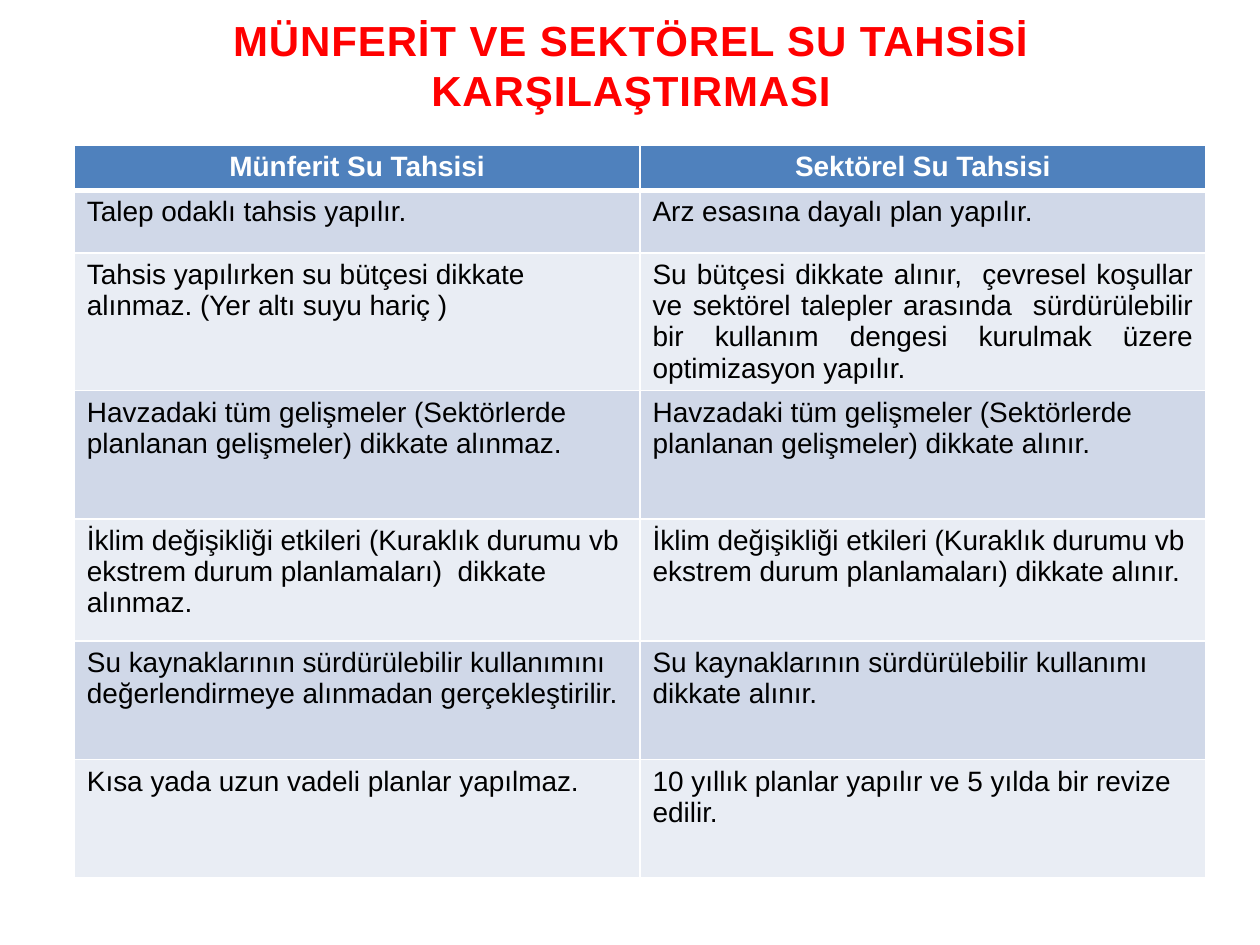
"""Builds a slide comparing individual and sectoral water allocation."""
from lxml import etree
from pptx import Presentation
from pptx.dml.color import RGBColor
from pptx.enum.text import MSO_ANCHOR, PP_ALIGN
from pptx.oxml.ns import qn
from pptx.util import Inches, Pt

LEFT, CENTER, JUSTIFY = PP_ALIGN.LEFT, PP_ALIGN.CENTER, PP_ALIGN.JUSTIFY
MIDDLE = MSO_ANCHOR.MIDDLE
RED = RGBColor(0xFF, 0x00, 0x00)
BLACK = RGBColor(0x00, 0x00, 0x00)
WHITE = RGBColor(0xFF, 0xFF, 0xFF)
HEADER_BLUE = RGBColor(0x4F, 0x81, 0xBD)
BANDS = [RGBColor(0xE9, 0xED, 0xF4), RGBColor(0xD0, 0xD8, 0xE8)]

TITLE = "MÜNFERİT VE SEKTÖREL SU TAHSİSİ KARŞILAŞTIRMASI"
ROWS = [
    ("Münferit Su Tahsisi", "Sektörel Su Tahsisi"),
    ("Talep odaklı tahsis yapılır.", "Arz esasına dayalı plan yapılır."),
    ("Tahsis yapılırken su bütçesi dikkate alınmaz. (Yer altı suyu hariç )",
     "Su bütçesi dikkate alınır,  çevresel koşullar ve sektörel talepler arasında  "
     "sürdürülebilir bir kullanım dengesi kurulmak üzere optimizasyon yapılır."),
    ("Havzadaki tüm gelişmeler (Sektörlerde planlanan gelişmeler) dikkate alınmaz.",
     "Havzadaki tüm gelişmeler (Sektörlerde planlanan gelişmeler) dikkate alınır."),
    ("İklim değişikliği etkileri (Kuraklık durumu vb ekstrem durum planlamaları)  "
     "dikkate alınmaz.",
     "İklim değişikliği etkileri (Kuraklık durumu vb ekstrem durum planlamaları) "
     "dikkate alınır."),
    ("Su kaynaklarının sürdürülebilir kullanımını değerlendirmeye alınmadan "
     "gerçekleştirilir.",
     "Su kaynaklarının sürdürülebilir kullanımı dikkate alınır."),
    ("Kısa yada uzun vadeli planlar yapılmaz.",
     "10 yıllık planlar yapılır ve 5 yılda bir revize edilir."),
]
ROW_HEIGHTS = [0.36, 0.5, 1.09, 1.02, 0.97, 0.94, 0.94]
COL_WIDTH = 4.49
JUSTIFIED = (2, 1)


def write(tf, text, size=16, color=BLACK, bold=False, align=LEFT, spacing=None):
    tf.word_wrap = True
    p = tf.paragraphs[0]
    p.alignment = align
    r = p.add_run()
    r.text = text
    r.font.name = "Arial"
    r.font.size = Pt(size)
    r.font.bold = bold
    r.font.color.rgb = color
    if spacing:
        r.font._element.set("spc", str(int(spacing * 100)))


def add_borders(cell, **widths):
    tc_pr = cell._tc.get_or_add_tcPr()
    for side in "LRTB":
        ln = etree.SubElement(tc_pr, qn(f"a:ln{side}"), w=str(Pt(widths.get(side, 1))))
        fill = etree.SubElement(ln, qn("a:solidFill"))
        etree.SubElement(fill, qn("a:srgbClr"), val=str(WHITE))


def add_comparison(slide):
    table = slide.shapes.add_table(
        len(ROWS), 2, Inches(0.59), Inches(1.15),
        Inches(2 * COL_WIDTH), Inches(sum(ROW_HEIGHTS))).table
    for col in table.columns:
        col.width = Inches(COL_WIDTH)
    for i, (texts, height) in enumerate(zip(ROWS, ROW_HEIGHTS)):
        table.rows[i].height = Inches(height)
        header = i == 0
        for j, text in enumerate(texts):
            cell = table.cell(i, j)
            add_borders(cell, T=3 if i == 1 else 1, B=3 if header else 1)
            cell.fill.solid()
            cell.fill.fore_color.rgb = HEADER_BLUE if header else BANDS[i % 2]
            align = CENTER if header else JUSTIFY if (i, j) == JUSTIFIED else LEFT
            write(cell.text_frame, text, color=WHITE if header else BLACK,
                  bold=header, align=align)


def main():
    prs = Presentation()
    prs.slide_width, prs.slide_height = Inches(10), Inches(7.5)
    slide = prs.slides.add_slide(prs.slide_layouts[6])
    add_comparison(slide)
    title = slide.shapes.add_textbox(Inches(0.51), 0, Inches(9), Inches(1.03))
    title.text_frame.vertical_anchor = MIDDLE
    write(title.text_frame, TITLE, size=24, color=RED, bold=True, align=CENTER,
          spacing=0.5)
    prs.save("out.pptx")


if __name__ == "__main__":
    main()
